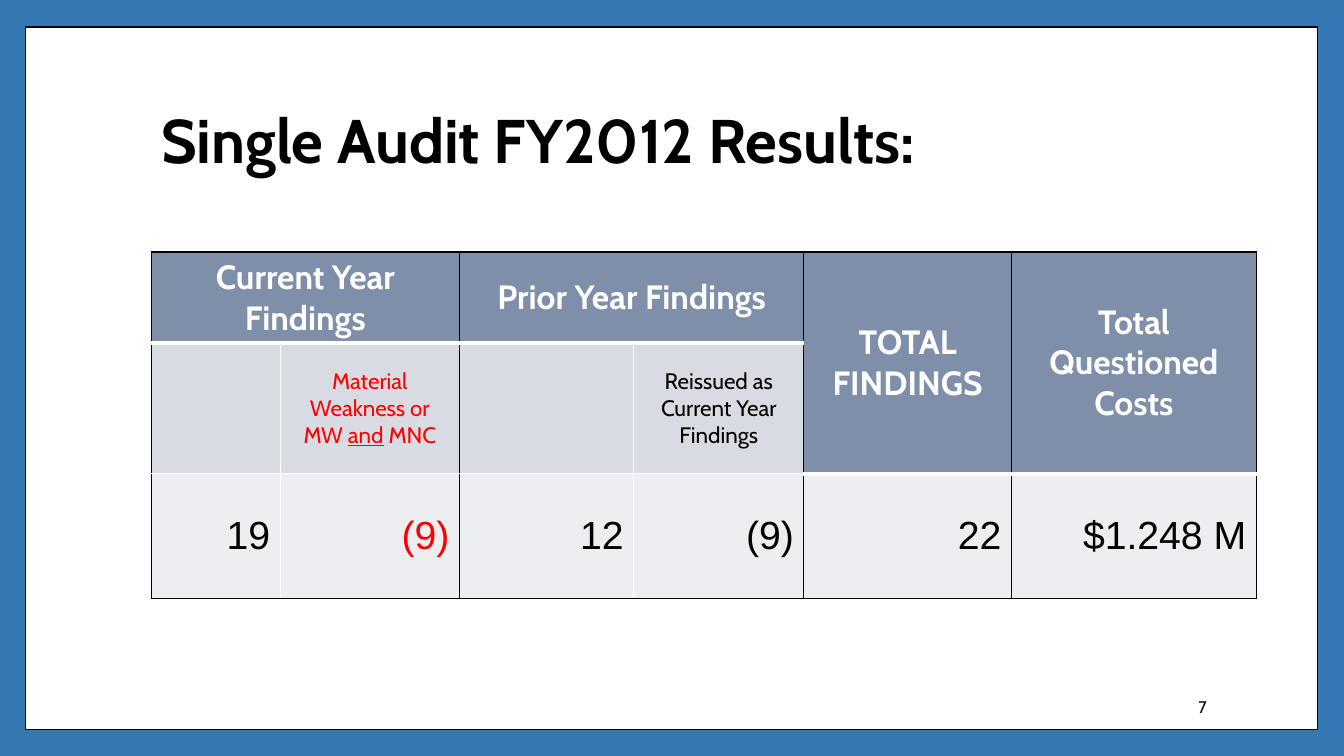
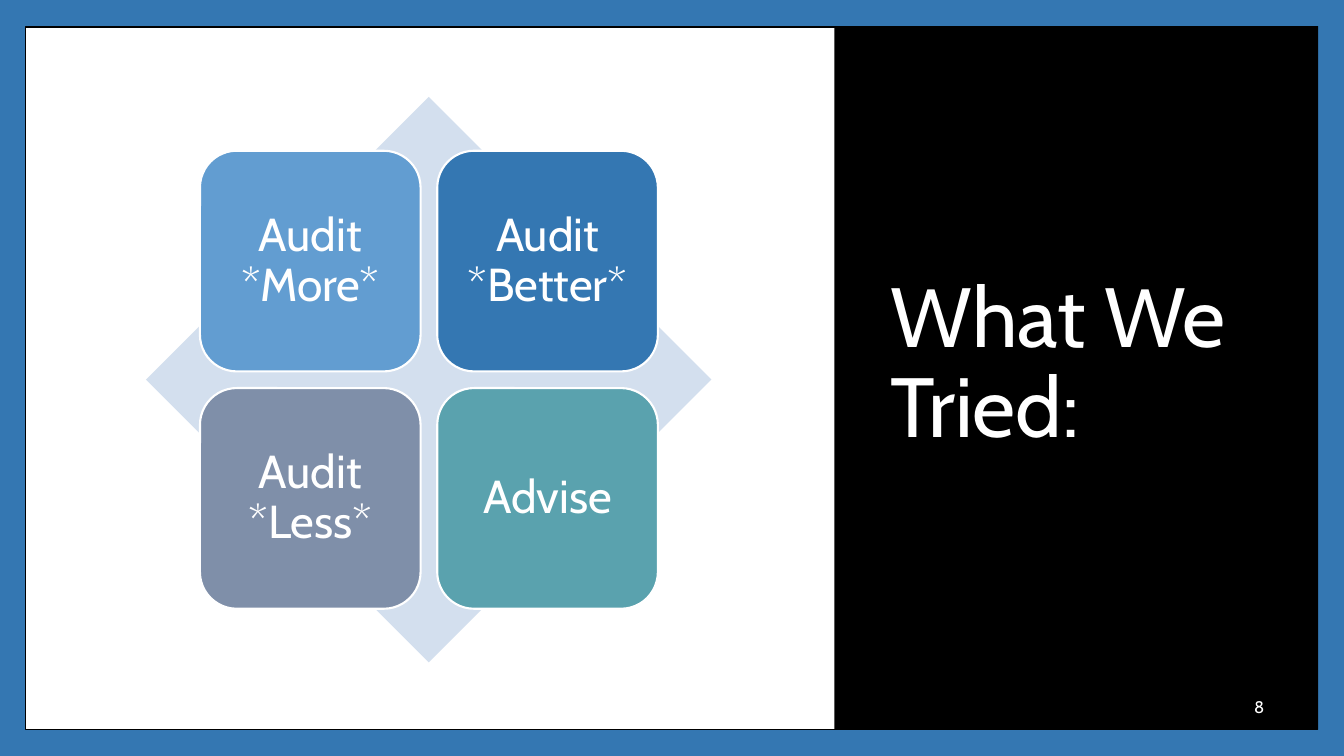
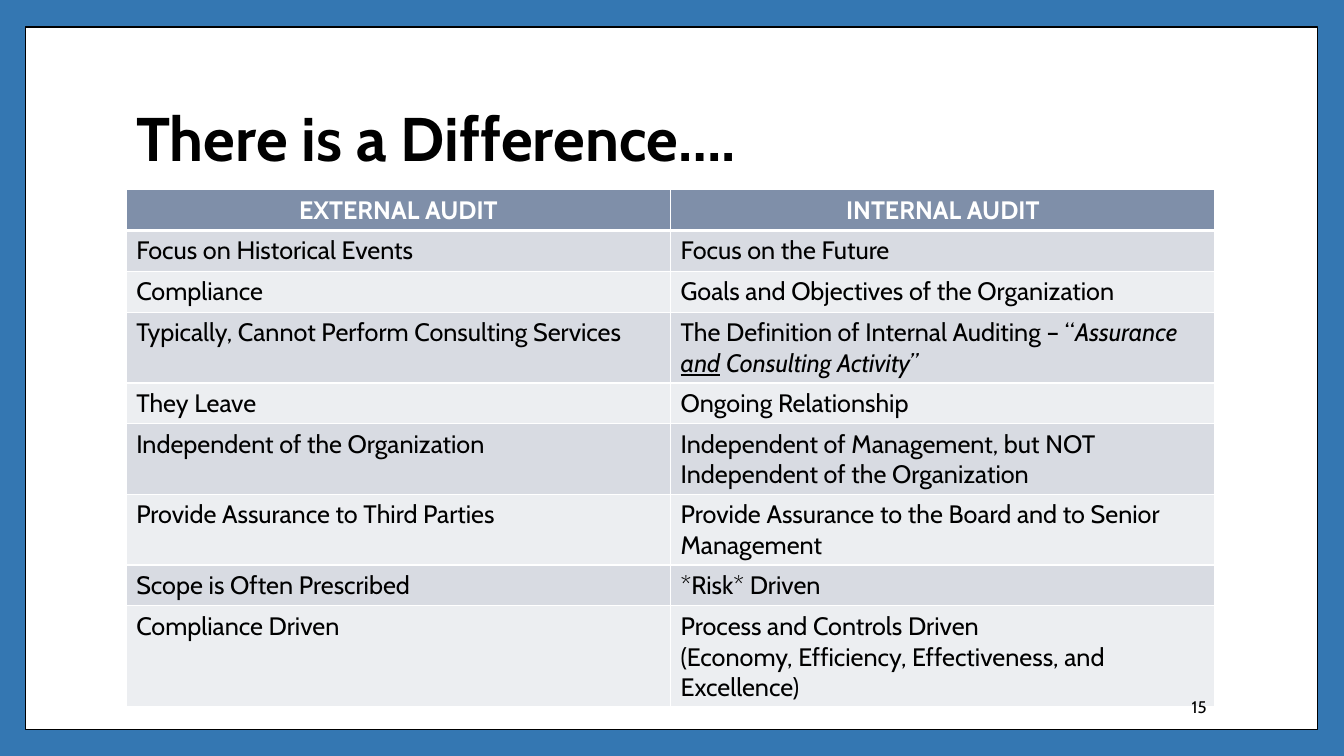
from lxml import etree
from pptx import Presentation
from pptx import util as u
from pptx.dml.color import RGBColor
from pptx.enum import shapes, text
from pptx.oxml.ns import qn

# Shared look
FONT = "Cabin"
BLACK, WHITE, RED = "000000", "FFFFFF", "FF0000"
BLUE, SLATE, SKY, TEAL = "3477B2", "7F8FA9", "629DD1", "5AA2AE"
PALE_BLUE = "D3DFEE"
BANDS = ["D8DBE2", "ECEEF1"]
LEFT, CENTER, RIGHT = (text.PP_ALIGN.LEFT, text.PP_ALIGN.CENTER,
                       text.PP_ALIGN.RIGHT)
MIDDLE, TOP = text.MSO_ANCHOR.MIDDLE, text.MSO_ANCHOR.TOP


def rgb(color):
    return RGBColor.from_string(color)


def write(tf, content, size, color=BLACK, align=LEFT, bold=False, font=FONT,
          spacing=None):
    """Fill a frame; content is a string or a list of paragraphs.

    A paragraph is a string or a list of (text, marks), marks from "iu".
    """
    paragraphs = [content] if isinstance(content, str) else content
    for i, para in enumerate(paragraphs):
        p = tf.paragraphs[0] if i == 0 else tf.add_paragraph()
        p.alignment = align
        if spacing:
            p.line_spacing = spacing
        if isinstance(para, str):
            p.text = para
        else:
            for words, marks in para:
                r = p.add_run()
                r.text = words
                r.font.italic = "i" in marks
                r.font.underline = "u" in marks
        for r in p.runs:
            r.font.name, r.font.size = font, u.Pt(size)
            r.font.bold = bold
            r.font.color.rgb = rgb(color)


def add_text(s, box, content, size, **style):
    sp = s.shapes.add_textbox(*map(u.Cm, box))
    tf = sp.text_frame
    tf.word_wrap = True
    tf.vertical_anchor = MIDDLE
    write(tf, content, size, **style)


def add_block(s, kind, box, fill, line=None, width=1):
    sp = s.shapes.add_shape(kind, *map(u.Cm, box))
    sp.shadow.inherit = False
    sp.fill.solid()
    sp.fill.fore_color.rgb = rgb(fill)
    if line:
        sp.line.color.rgb = rgb(line)
        sp.line.width = u.Pt(width)
    else:
        sp.line.fill.background()
    return sp


def add_framed_slide(prs):
    s = prs.slides.add_slide(prs.slide_layouts[6])
    s.background.fill.solid()
    s.background.fill.fore_color.rgb = rgb(BLUE)
    add_block(s, shapes.MSO_SHAPE.RECTANGLE, (0.64, 0.68, 32.56, 17.7),
              WHITE, BLACK)
    return s


def add_title(s, box, title, size=44, color=BLACK, bold=True):
    add_text(s, box, title, size, color=color, bold=bold, spacing=0.9)


def add_number(s, number, right=30.66, color=BLACK):
    add_text(s, (right - 4.75, 17.3, 4.75, 1.02), str(number), 12,
             color=color, align=RIGHT)


def add_grid(s, left, top, widths, heights):
    frame = s.shapes.add_table(len(heights), len(widths), u.Cm(left),
                               u.Cm(top), u.Cm(sum(widths)),
                               u.Cm(sum(heights)))
    table = frame.table
    table.horz_banding = False
    for col, width in zip(table.columns, widths):
        col.width = u.Cm(width)
    for row, height in zip(table.rows, heights):
        row.height = u.Cm(height)
    return table


def style_cell(cell, fill, borders, anchor=TOP):
    """Borders are (color, points) for left, right, top and bottom."""
    tcPr = cell._tc.get_or_add_tcPr()
    for side, (color, width) in zip("LRTB", borders):
        ln = etree.SubElement(tcPr, qn("a:ln" + side), w=str(u.Pt(width)))
        solid = etree.SubElement(ln, qn("a:solidFill"))
        etree.SubElement(solid, qn("a:srgbClr"), val=color)
    cell.fill.solid()
    cell.fill.fore_color.rgb = rgb(fill)
    cell.vertical_anchor = anchor


# Slide with the audit results
def add_results(prs):
    s = add_framed_slide(prs)
    add_title(s, (3.81, 1.57, 26.67, 4.11), "Single Audit FY2012 Results:")
    table = add_grid(s, 3.81, 6.35, [3.25, 4.52, 4.39, 4.29, 5.23, 6.17],
                     [2.16, 3.12, 3.15])

    def upright(row, edge):
        return (WHITE if row and edge in (1, 3) else BLACK, 1)

    def level(edge, col):
        if edge in (0, 3):
            return (BLACK, 1)
        header_end = 2 if col >= 4 else 1
        return (WHITE, 3 if edge == header_end else 1)

    for r in range(3):
        for c in range(6):
            header = r == 0 or (r == 1 and c >= 4)
            borders = [upright(r, c), upright(r, c + 1),
                       level(r, c), level(r + 1, c)]
            if r == 0:
                borders[3] = (WHITE, 3)
            style_cell(table.cell(r, c), SLATE if header else BANDS[r - 1],
                       borders, MIDDLE)
    for start, end in [((0, 0), (0, 1)), ((0, 2), (0, 3)),
                       ((0, 4), (1, 4)), ((0, 5), (1, 5))]:
        table.cell(*start).merge(table.cell(*end))

    headings = {0: "Current Year Findings", 2: "Prior Year Findings",
                4: "TOTAL FINDINGS", 5: "Total Questioned Costs"}
    for c, heading in headings.items():
        write(table.cell(0, c).text_frame, heading, 24, WHITE, CENTER, True)
    weakness = ["Material Weakness or",
                [("MW ", ""), ("and", "u"), (" MNC", "")]]
    write(table.cell(1, 1).text_frame, weakness, 16, RED, CENTER)
    write(table.cell(1, 3).text_frame, "Reissued as Current Year Findings",
          16, BLACK, CENTER)
    for c, value in enumerate(["19", "(9)", "12", "(9)", "22", "$1.248 M"]):
        write(table.cell(2, c).text_frame, value, 28,
              RED if c == 1 else BLACK, RIGHT, font="Arial")
    add_number(s, 7)


# Slide with the four approaches
def add_approaches(prs):
    s = add_framed_slide(prs)
    add_block(s, shapes.MSO_SHAPE.RECTANGLE, (21.03, 0.66, 12.19, 17.73),
              BLACK)
    add_title(s, (22.2, 1.7, 9.93, 15.01), "What We Tried:", 60, WHITE,
              False)
    add_number(s, 8, 32.11, WHITE)
    add_block(s, shapes.MSO_SHAPE.DIAMOND, (3.68, 2.44, 14.25, 14.25),
              PALE_BLUE)
    tiles = [("Audit *More*", SKY), ("Audit *Better*", BLUE),
             ("Audit *Less*", SLATE), ("Advise", TEAL)]
    size, pitch = 5.56, 5.98
    for i, (label, fill) in enumerate(tiles):
        row, col = divmod(i, 2)
        box = (5.04 + col * pitch, 3.8 + row * pitch, size, size)
        sp = add_block(s, shapes.MSO_SHAPE.ROUNDED_RECTANGLE, box, fill,
                       WHITE, 1.5)
        tf = sp.text_frame
        tf.word_wrap = True
        tf.vertical_anchor = MIDDLE
        tf.margin_left = tf.margin_right = u.Cm(0.36)
        tf.margin_top = tf.margin_bottom = u.Cm(0.36)
        write(tf, label, 33, WHITE, CENTER, spacing=0.9)


# Slide comparing external and internal audit
def add_difference(prs):
    s = add_framed_slide(prs)
    add_title(s, (3.18, 1.7, 27.43, 3.76), "There is a Difference….")
    rows = [
        ("EXTERNAL AUDIT", "INTERNAL AUDIT"),
        ("Focus on Historical Events", "Focus on the Future"),
        ("Compliance", "Goals and Objectives of the Organization"),
        ("Typically, Cannot Perform Consulting Services",
         [[("The Definition of Internal Auditing – “", ""),
           ("Assurance ", "i"), ("and", "iu"),
           (" Consulting Activity”", "i")]]),
        ("They Leave", "Ongoing Relationship"),
        ("Independent of the Organization",
         "Independent of Management, but NOT Independent of the "
         "Organization"),
        ("Provide Assurance to Third Parties",
         "Provide Assurance to the Board and to Senior Management"),
        ("Scope is Often Prescribed", "*Risk* Driven"),
        ("Compliance Driven",
         ["Process and Controls Driven",
          "(Economy, Efficiency, Effectiveness, and Excellence)"]),
    ]
    table = add_grid(s, 3.18, 4.78, [13.72] * 2, [1.03] * len(rows))
    for r, row in enumerate(rows):
        header = r == 0
        fill = SLATE if header else BANDS[(r - 1) % 2]
        borders = [(WHITE, 3 if edge == 1 else 1)
                   for edge in (None, None, r, r + 1)]
        for c, content in enumerate(row):
            cell = table.cell(r, c)
            style_cell(cell, fill, borders)
            write(cell.text_frame, content, 18, WHITE if header else BLACK,
                  CENTER if header else LEFT, header)
    add_number(s, 15)


def main():
    prs = Presentation()
    prs.slide_width, prs.slide_height = u.Cm(33.87), u.Cm(19.05)
    add_results(prs)
    add_approaches(prs)
    add_difference(prs)
    prs.save("out.pptx")


if __name__ == "__main__":
    main()
